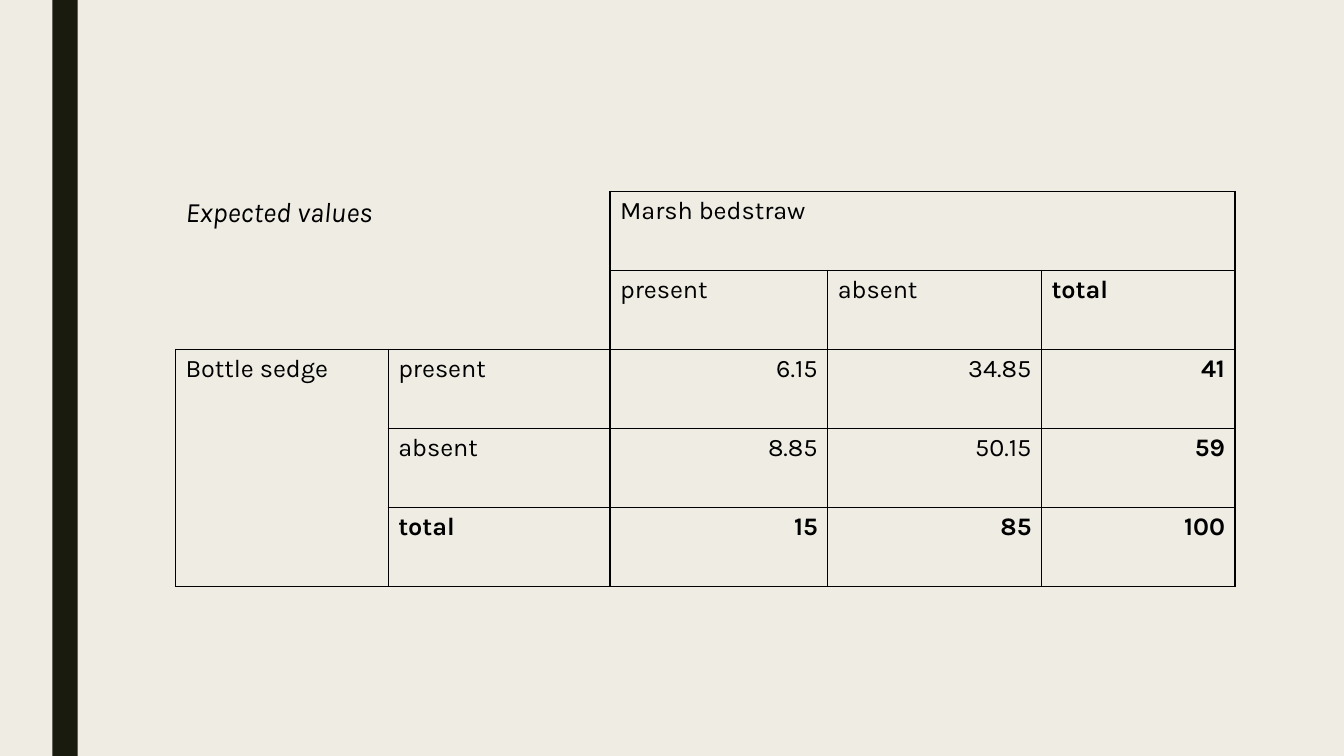
from lxml import etree
from pptx import Presentation
from pptx import util as u
from pptx.dml.color import RGBColor
from pptx.enum import shapes, text
from pptx.oxml.ns import qn

# Content: None marks a cell covered by a merge
ROWS = [
    ["Expected values", None, "Marsh bedstraw", None, None],
    [None, None, "present", "absent", "total"],
    ["Bottle sedge", "present", "6.15", "34.85", "41"],
    [None, "absent", "8.85", "50.15", "59"],
    [None, "total", "15", "85", "100"],
]
MERGES = [((0, 0), (1, 1)), ((0, 2), (0, 4)), ((2, 0), (4, 0))]
COLORS = {"paper": "EFEDE3", "bar": "191B0E", "ink": "000000"}
FONT = "Karla"

# Layout in inches
SLIDE_W, SLIDE_H = 13.33, 7.5
BAR_LEFT, BAR_W = 0.52, 0.25
TABLE_LEFT, TABLE_TOP, TABLE_H = 1.74, 1.9, 3.92
COL_WIDTHS = [2.11, 2.2, 2.16, 2.12, 1.92]
HEADER_ROWS = HEADER_COLS = 2


def rgb(name):
    return RGBColor.from_string(COLORS[name])


def set_borders(cell, drawn):
    """Draw a 1 pt line on the sides in drawn and clear the others."""
    tcPr = cell._tc.get_or_add_tcPr()
    for side in "LRTB":
        ln = etree.SubElement(tcPr, qn(f"a:ln{side}"), w=str(u.Pt(1)))
        if side in drawn:
            fill = etree.SubElement(ln, qn("a:solidFill"))
            etree.SubElement(fill, qn("a:srgbClr"), val=COLORS["ink"])
        else:
            etree.SubElement(ln, qn("a:noFill"))


prs = Presentation()
prs.slide_width, prs.slide_height = u.Inches(SLIDE_W), u.Inches(SLIDE_H)
s = prs.slides.add_slide(prs.slide_layouts[6])
s.background.fill.solid()
s.background.fill.fore_color.rgb = rgb("paper")

# Side bar
bar = s.shapes.add_shape(shapes.MSO_SHAPE.RECTANGLE, u.Inches(BAR_LEFT), 0,
                         u.Inches(BAR_W), prs.slide_height)
bar.shadow.inherit = False
bar.fill.solid()
bar.fill.fore_color.rgb = rgb("bar")
bar.line.fill.background()

# Contingency table
table = s.shapes.add_table(len(ROWS), len(COL_WIDTHS), u.Inches(TABLE_LEFT),
                           u.Inches(TABLE_TOP), u.Inches(sum(COL_WIDTHS)),
                           u.Inches(TABLE_H)).table
table.first_row = table.horz_banding = False
for col, width in zip(table.columns, COL_WIDTHS):
    col.width = u.Inches(width)
for start, end in MERGES:
    table.cell(*start).merge(table.cell(*end))

for i, row in enumerate(ROWS):
    for j, label in enumerate(row):
        cell = table.cell(i, j)
        in_corner = i < HEADER_ROWS and j < HEADER_COLS
        set_borders(cell, "RB" if in_corner else "LRTB")
        cell.fill.background()
        if label is None:
            continue
        cell.text_frame.text = label
        p = cell.text_frame.paragraphs[0]
        if i >= HEADER_ROWS and j >= HEADER_COLS:
            p.alignment = text.PP_ALIGN.RIGHT
        f = p.runs[0].font
        f.name, f.color.rgb = FONT, rgb("ink")
        f.size = u.Pt(20 if in_corner else 18)
        f.italic = in_corner
        # Totals: the last column below the top header, and the last row
        f.bold = label == "total" or (i >= HEADER_ROWS and j == len(row) - 1) \
            or i == len(ROWS) - 1

prs.save("out.pptx")
